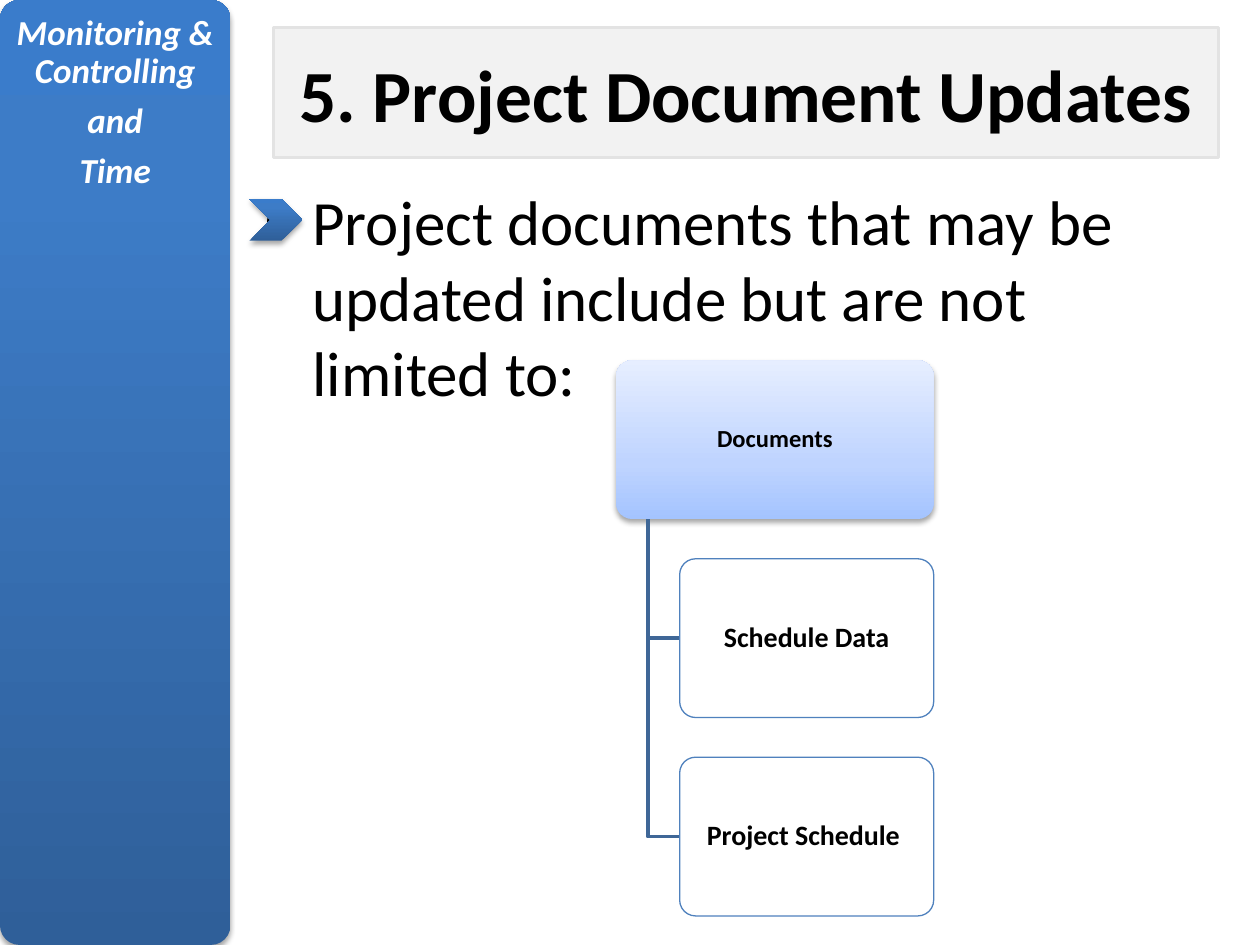
from lxml import etree
from pptx import Presentation
from pptx.dml.color import RGBColor
from pptx.enum.shapes import MSO_SHAPE as Shape
from pptx.enum.text import MSO_ANCHOR as Anchor, MSO_AUTO_SIZE as AutoSize, PP_ALIGN as Align
from pptx.oxml import parse_xml
from pptx.oxml.ns import nsdecls, qn
from pptx.util import Inches, Pt

COLORS = {
    "text": "000000", "light": "FFFFFF", "title_fill": "F2F2F2", "title_edge": "E3E3E3",
    "branch": "3F6797", "box_edge": "4F81BD",
}
BLUE = [(0, "2F5F99"), (80, "3D7CC7"), (100, "3A7CCB")]
PALE = [(0, "A4C4FF"), (35, "BFD4FF"), (100, "E6EEFF")]


def rgb(name):
    return RGBColor.from_string(COLORS[name])


class SlideBuilder:
    font = "Calibri"

    def __init__(self, slide):
        self.slide = slide

    def set_text(self, shape, lines, size, color="text", bold=False, italic=False,
                 align=Align.CENTER, anchor=Anchor.MIDDLE, margins=None):
        frame = shape.text_frame
        frame.word_wrap = True
        frame.auto_size = AutoSize.NONE
        frame.vertical_anchor = anchor
        if margins:
            frame.margin_left = frame.margin_right = Inches(margins[0])
            frame.margin_top = frame.margin_bottom = Inches(margins[1])
        frame.text = "\n".join(lines)
        for paragraph in frame.paragraphs:
            paragraph.alignment = align
            font = paragraph.font
            font.name, font.size = self.font, Pt(size)
            font.bold, font.italic = bold, italic
            font.color.rgb = rgb(color)
        return frame.paragraphs

    def label(self, shape, lines, size, **style):
        """Set tight lines with a gap of 35% of the text size after each."""
        for paragraph in self.set_text(shape, lines, size, bold=True, **style):
            paragraph.line_spacing = 0.9
            paragraph.space_after = Pt(0.35 * size)

    def place(self, placeholder, left, top, width, height):
        placeholder.left, placeholder.top = Inches(left), Inches(top)
        placeholder.width, placeholder.height = Inches(width), Inches(height)

    def title(self, text, *box):
        title = self.slide.shapes.title
        self.place(title, *box)
        title.fill.solid()
        title.fill.fore_color.rgb = rgb("title_fill")
        title.line.color.rgb = rgb("title_edge")
        title.line.width = Pt(2)
        self.set_text(title, [text], 42, bold=True)

    def body(self, text, *box):
        body = self.slide.placeholders[1]
        self.place(body, *box)
        paragraph = self.set_text(body, [text], 36, align=Align.LEFT, anchor=Anchor.TOP)[0]
        paragraph.space_before = Pt(7.2)
        properties = paragraph._p.get_or_add_pPr()
        properties.set("marL", str(Inches(0.38)))
        properties.set("indent", str(Inches(-0.38)))

    def shape(self, kind, left, top, width, height, corner=None):
        shape = self.slide.shapes.add_shape(
            kind, Inches(left), Inches(top), Inches(width), Inches(height))
        shape.shadow.inherit = False
        if corner is not None:
            shape.adjustments[0] = corner
        return shape

    def raised(self, kind, stops, *box, corner=None):
        """Add a borderless shape with an upward gradient and a soft shadow below."""
        shape = self.shape(kind, *box, corner=corner)
        shape.line.fill.background()
        gradient = "".join(f'<a:gs pos="{pos * 1000}"><a:srgbClr val="{color}"/></a:gs>'
                           for pos, color in stops)
        shape._element.spPr.find(qn("a:prstGeom")).addnext(parse_xml(
            f'<a:gradFill {nsdecls("a")} rotWithShape="1"><a:gsLst>{gradient}</a:gsLst>'
            '<a:lin ang="16200000" scaled="0"/></a:gradFill>'))
        shape._element.spPr.find(qn("a:effectLst")).append(parse_xml(
            f'<a:outerShdw {nsdecls("a")} blurRad="{Pt(3.1)}" dist="{Pt(1.8)}" dir="5400000"'
            ' rotWithShape="0"><a:srgbClr val="000000"><a:alpha val="35000"/></a:srgbClr>'
            '</a:outerShdw>'))
        return shape

    def outlined(self, *box, corner):
        shape = self.shape(Shape.ROUNDED_RECTANGLE, *box, corner=corner)
        shape.fill.solid()
        shape.fill.fore_color.rgb = rgb("light")
        fill_color = shape._element.spPr.find(qn("a:solidFill"))[0]
        etree.SubElement(fill_color, qn("a:alpha")).set("val", "90000")
        shape.line.color.rgb = rgb("box_edge")
        shape.line.width = Pt(0.75)
        return shape

    def branch(self, x, top, end_x, end_y):
        """Draw an open elbow: down from (x, top), then right to (end_x, end_y)."""
        outline = self.slide.shapes.build_freeform(Inches(x), Inches(top))
        outline.add_line_segments(
            [(Inches(x), Inches(end_y)), (Inches(end_x), Inches(end_y))], close=False)
        elbow = outline.convert_to_shape()
        elbow.shadow.inherit = False
        elbow.fill.background()
        elbow.line.color.rgb = rgb("branch")
        elbow.line.width = Pt(2)


def main():
    deck = Presentation()
    deck.slide_width, deck.slide_height = Inches(10), Inches(7.5)
    page = SlideBuilder(deck.slides.add_slide(deck.slide_layouts[1]))

    page.title("5. Project Document Updates", 2.17, 0.22, 7.5, 1.03)
    page.body("Project documents that may be updated include but are not limited to:",
              2, 1.4, 7.75, 1.77)

    sidebar = page.raised(Shape.ROUNDED_RECTANGLE, BLUE, 0, 0, 1.83, 7.5, corner=0.085)
    page.label(sidebar, ["Monitoring & Controlling", "and", "Time"], 20, color="light",
               italic=True, anchor=Anchor.TOP, margins=(0.08, 0.08))

    left, top, width, height = 4.89, 2.86, 2.52, 1.26
    indent, step, corner = width / 5, height * 1.25, 0.1
    margins = (0.03, 0.02)
    root = page.raised(Shape.ROUNDED_RECTANGLE, PALE, left, top, width, height, corner=corner)
    page.label(root, ["Documents"], 14, margins=margins)
    for row, name in enumerate(["Schedule Data", "Project Schedule "], start=1):
        child_top = top + row * step
        page.branch(left + indent / 2, top + height, left + indent, child_top + height / 2)
        child = page.outlined(left + indent, child_top, width - indent, height, corner=corner)
        page.label(child, [name], 16, margins=margins)

    page.raised(Shape.CHEVRON, BLUE, 1.98, 1.58, 0.42, 0.33)
    deck.save("out.pptx")


if __name__ == "__main__":
    main()
